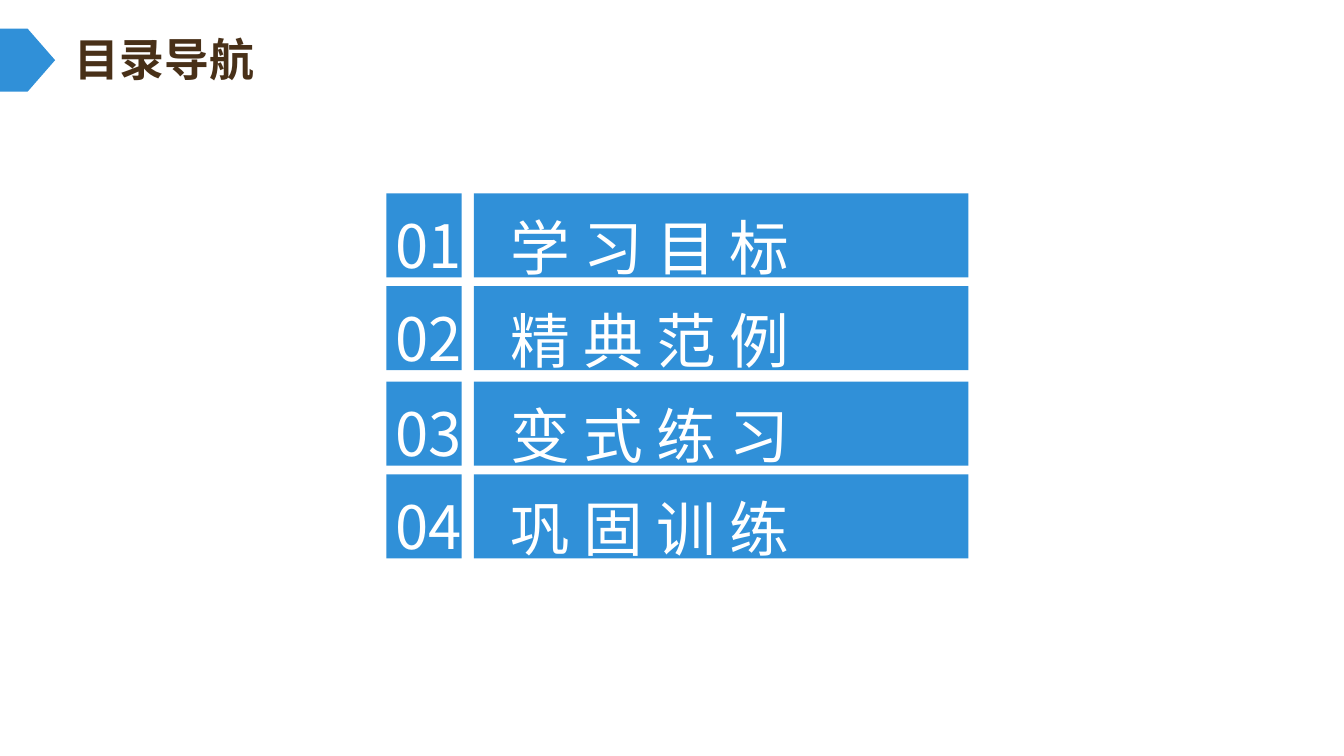
from dataclasses import dataclass

from pptx import Presentation
from pptx.dml.color import RGBColor
from pptx.enum.shapes import MSO_SHAPE
from pptx.enum.text import MSO_ANCHOR, MSO_AUTO_SIZE, PP_ALIGN
from pptx.util import Inches, Pt


@dataclass(frozen=True)
class Theme:
    font: str = "Noto Sans CJK SC"
    accent: RGBColor = RGBColor(0x30, 0x90, 0xD8)
    heading: RGBColor = RGBColor(0x48, 0x30, 0x18)
    on_accent: RGBColor = RGBColor(0xFF, 0xFF, 0xFF)
    heading_size: Pt = Pt(24)
    entry_size: Pt = Pt(32)


theme = Theme()
deck = Presentation()
deck.slide_width = Inches(10)
deck.slide_height = deck.slide_width * 9 // 16
slide = deck.slides.add_slide(deck.slide_layouts[6])
cell = deck.slide_width / 100


def add_block(preset, *box):
    block = slide.shapes.add_shape(preset, *(round(n * cell) for n in box))
    block.shadow.inherit = False
    block.fill.solid()
    block.fill.fore_color.rgb = theme.accent
    block.line.fill.background()
    return block


def add_label(text, box, size, color, bold=False, inset=1):
    label = slide.shapes.add_textbox(*(round(n * cell) for n in box))
    frame = label.text_frame
    frame.word_wrap = False
    frame.auto_size = MSO_AUTO_SIZE.SHAPE_TO_FIT_TEXT
    frame.vertical_anchor = MSO_ANCHOR.TOP
    frame.margin_left = frame.margin_right = round(inset * cell)
    frame.margin_top = frame.margin_bottom = round(inset * cell / 2)
    paragraph = frame.paragraphs[0]
    paragraph.alignment = PP_ALIGN.LEFT
    run = paragraph.add_run()
    run.text = text
    run.font.name = theme.font
    run.font.size = size
    run.font.bold = bold
    run.font.color.rgb = color


entries = ["学 习 目 标", "精 典 范 例", "变 式 练 习", "巩 固 训 练"]
first_row, row_pitch, row_height, pair_gap = 14.4, 6.9, 6.25, 0.2
number_column, entry_column = 28.75, 35.25

for index, entry in enumerate(entries):
    row = first_row + index * row_pitch + index // 2 * pair_gap
    text_row = row + 0.65
    add_block(MSO_SHAPE.RECTANGLE, number_column, row, 5.6, row_height)
    add_label(f"{index + 1:02}", (number_column - 0.3, text_row, 7.3, 6.4),
              theme.entry_size, theme.on_accent)
    add_block(MSO_SHAPE.RECTANGLE, entry_column, row, 36.8, row_height)
    add_label(entry, (entry_column + 1.4, text_row, 45.8, 6.7),
              theme.entry_size, theme.on_accent, inset=1.3)

heading_marker = add_block(MSO_SHAPE.PENTAGON, 0, 2.13, 4.1, 4.7)
heading_marker.adjustments[0] = 0.5
add_label("目录导航", (4.57, 1.9, 16.5, 5), theme.heading_size, theme.heading, bold=True)

deck.save("out.pptx")
